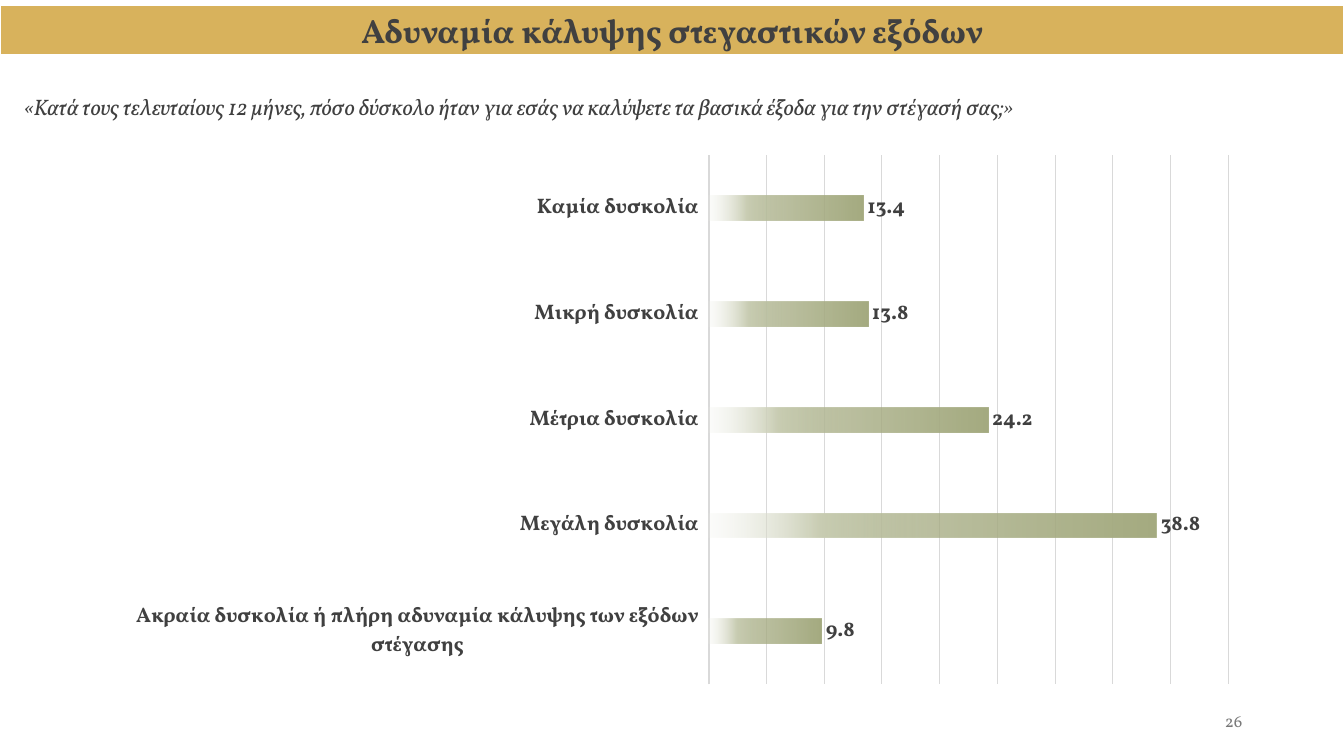
from lxml import etree
from pptx import Presentation
from pptx.chart.data import CategoryChartData
from pptx.dml.color import RGBColor
from pptx.enum.chart import XL_CHART_TYPE as ChartType
from pptx.enum.chart import XL_LABEL_POSITION as LabelPosition
from pptx.enum.chart import XL_TICK_LABEL_POSITION as TickLabels
from pptx.enum.chart import XL_TICK_MARK as TickMark
from pptx.enum.text import MSO_ANCHOR as Anchor
from pptx.enum.text import PP_ALIGN as Align
from pptx.oxml import parse_xml
from pptx.oxml.ns import nsdecls, qn
from pptx.util import Inches, Pt

FONT = "Vollkorn"
GOLD = RGBColor(0xD8, 0xB2, 0x5C)
DARK = RGBColor(0x40, 0x40, 0x40)
GRAY = RGBColor(0x79, 0x79, 0x79)
GRID = RGBColor(0xD9, 0xD9, 0xD9)
WHITE = RGBColor(0xFF, 0xFF, 0xFF)
BAR_STOPS = [
    (0, RGBColor(0xA5, 0xAB, 0x81), 100),
    (51, RGBColor(0xA5, 0xAB, 0x81), 75),
    (75, RGBColor(0xC9, 0xCD, 0xB3), 100),
    (100, RGBColor(0xED, 0xEE, 0xE6), 15),
]
DIFFICULTY = {
    "Ακραία δυσκολία ή πλήρη αδυναμία κάλυψης των εξόδων στέγασης": 9.8,
    "Μεγάλη δυσκολία": 38.8,
    "Μέτρια δυσκολία": 24.2,
    "Μικρή δυσκολία": 13.8,
    "Καμία δυσκολία": 13.4,
}


def format_font(font, size, color=DARK, bold=False, italic=False):
    """Apply the slide's typeface with the given size, colour and style."""
    font.name = FONT
    font.size = Pt(size)
    font.color.rgb = color
    font.bold = bold
    font.italic = italic


def write_text(shape, text, align=Align.LEFT, anchor=Anchor.TOP, after=0, **style):
    """Fill a shape with one formatted paragraph."""
    frame = shape.text_frame
    frame.word_wrap = True
    frame.vertical_anchor = anchor
    paragraph = frame.paragraphs[0]
    paragraph.alignment = align
    paragraph.space_after = Pt(after)
    run = paragraph.add_run()
    run.text = text
    format_font(run.font, **style)


def add_text(slide, text, left, top, width, height, **layout):
    """Add a text box holding one paragraph."""
    box = slide.shapes.add_textbox(
        Inches(left), Inches(top), Inches(width), Inches(height))
    write_text(box, text, **layout)


def format_title(slide, text):
    """Turn the title placeholder into the gold band across the top."""
    title = slide.shapes.title
    title.left, title.top = Inches(0), Inches(0.05)
    title.width, title.height = Inches(13.33), Inches(0.5)
    title.fill.solid()
    title.fill.fore_color.rgb = GOLD
    title.line.color.rgb = WHITE
    title.line.width = Pt(2)
    write_text(title, text, align=Align.CENTER, anchor=Anchor.MIDDLE,
               size=24, bold=True)


def apply_gradient(series, stops, angle):
    """Fill a series with a linear gradient of colour and opacity stops."""
    stop_xml = "".join(
        f'<a:gs pos="{position * 1000}"><a:srgbClr val="{color}">'
        f'<a:alpha val="{opacity * 1000}"/></a:srgbClr></a:gs>'
        for position, color, opacity in stops)
    gradient = parse_xml(
        f'<a:gradFill {nsdecls("a")} rotWithShape="1"><a:gsLst>{stop_xml}</a:gsLst>'
        f'<a:lin ang="{angle * 60000}" scaled="0"/></a:gradFill>')
    series.format.line.fill.background()
    series.format.fill._xPr.insert(0, gradient)


def place_plot(chart, **fractions):
    """Fix the inner plot area as fractions of the chart frame."""
    plot_area = chart._chartSpace.find(".//" + qn("c:plotArea"))
    for old_layout in plot_area.findall(qn("c:layout")):
        plot_area.remove(old_layout)
    layout = etree.Element(qn("c:layout"))
    manual = etree.SubElement(layout, qn("c:manualLayout"))
    settings = {"layoutTarget": "inner", "xMode": "edge", "yMode": "edge", **fractions}
    for name, value in settings.items():
        etree.SubElement(manual, qn(f"c:{name}"), val=str(value))
    plot_area.insert(0, layout)


def add_difficulty_chart(slide):
    """Add the bar chart of answers in percent."""
    data = CategoryChartData(number_format="###0.0")
    data.categories = list(DIFFICULTY)
    data.add_series("Series 1", list(DIFFICULTY.values()))
    chart = slide.shapes.add_chart(
        ChartType.BAR_CLUSTERED, Inches(1.2), Inches(1.43),
        Inches(11.21), Inches(5.47), data).chart
    chart.has_legend = False
    chart.has_title = False
    format_font(chart.font, 15, bold=True)
    place_plot(chart, x=0.52, y=0.02, w=0.46, h=0.96)

    category_axis = chart.category_axis
    category_axis.major_tick_mark = TickMark.NONE
    category_axis.tick_label_position = TickLabels.LOW
    category_axis.format.line.color.rgb = GRID
    category_axis.format.line.width = Pt(1.5)
    format_font(category_axis.tick_labels.font, 15, bold=True)

    value_axis = chart.value_axis
    value_axis.minimum_scale, value_axis.maximum_scale = 0, 45
    value_axis.major_unit = 5
    value_axis.visible = False
    value_axis.has_major_gridlines = True
    value_axis.major_gridlines.format.line.color.rgb = GRID
    value_axis.major_gridlines.format.line.width = Pt(0.75)

    plot = chart.plots[0]
    plot.gap_width, plot.overlap = 326, -58
    plot.vary_by_categories = False
    plot.has_data_labels = True
    labels = plot.data_labels
    labels.show_value = True
    labels.number_format = "###0.0"
    labels.number_format_is_linked = False
    labels.position = LabelPosition.OUTSIDE_END
    format_font(labels.font, 15, bold=True)
    apply_gradient(plot.series[0], BAR_STOPS, 180)


def main():
    """Build the slide and save it."""
    presentation = Presentation()
    presentation.slide_width = Inches(13.33)
    presentation.slide_height = Inches(7.5)
    slide = presentation.slides.add_slide(presentation.slide_layouts[5])
    add_difficulty_chart(slide)
    format_title(slide, "Αδυναμία κάλυψης στεγαστικών εξόδων")
    add_text(slide, "«Κατά τους τελευταίους 12 μήνες, πόσο δύσκολο ήταν για εσάς "
             "να καλύψετε τα βασικά έξοδα για την στέγασή σας;»",
             0.14, 0.87, 11.38, 0.37, after=6, size=16, italic=True)
    add_text(slide, "26", 9.42, 6.95, 3, 0.4, align=Align.RIGHT,
             anchor=Anchor.MIDDLE, size=12, color=GRAY)
    presentation.save("out.pptx")


if __name__ == "__main__":
    main()
